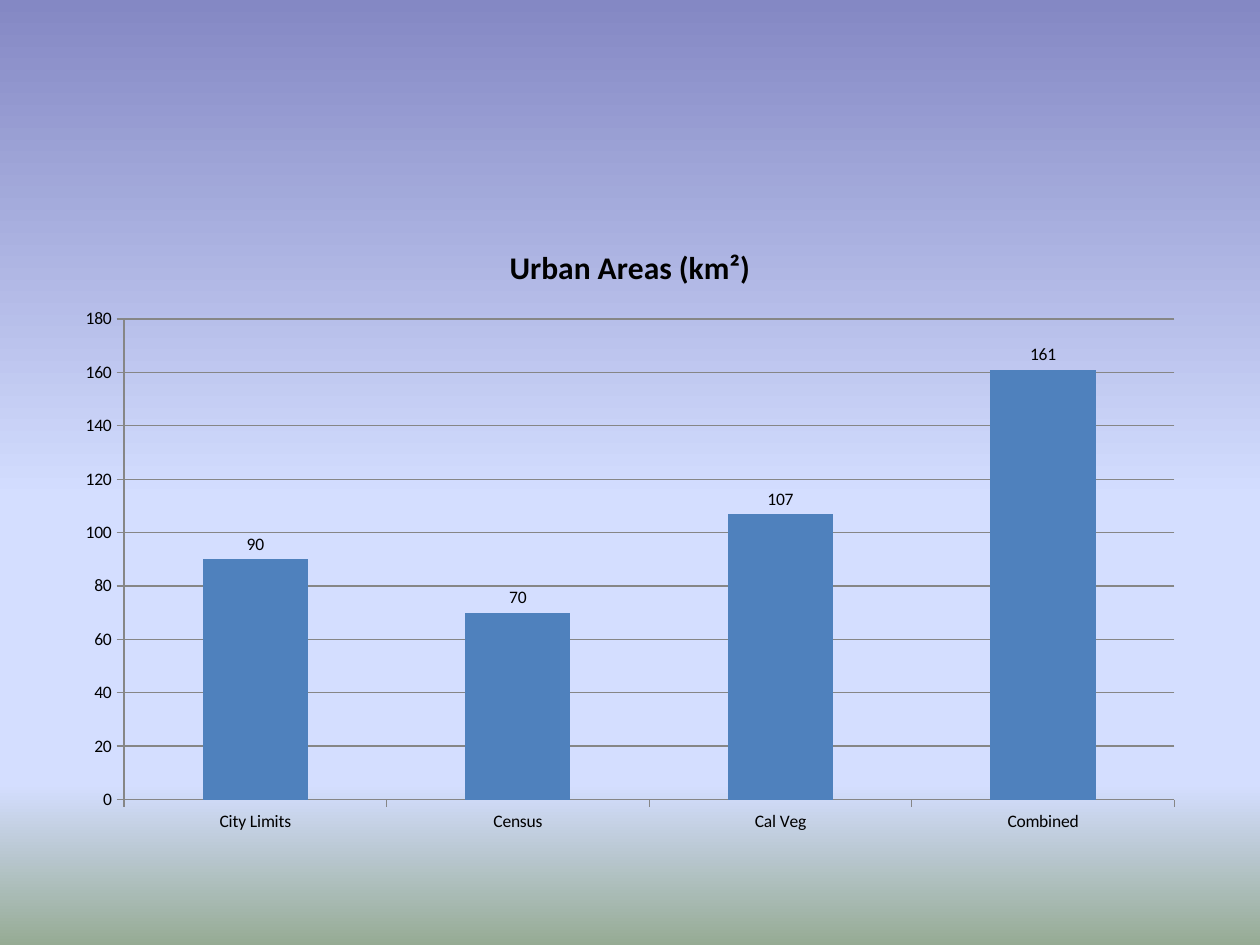
from lxml.etree import SubElement
from pptx import Presentation
from pptx.chart.data import CategoryChartData
from pptx.dml.color import RGBColor
from pptx.enum.chart import XL_CHART_TYPE as ChartType
from pptx.enum.chart import XL_LABEL_POSITION as LabelPosition
from pptx.enum.chart import XL_TICK_MARK as TickMark
from pptx.oxml.ns import qn
from pptx.util import Inches, Pt

FONT = "Calibri"
BLACK, BAR_BLUE, LINE_GRAY = "000000", "4F81BD", "868686"
SKY_STOPS = [(0, "8488C4"), (53, "D4DEFF"), (83, "D4DEFF"), (100, "96AB94")]
URBAN_AREAS = {"City Limits": 90, "Census": 70, "Cal Veg": 107, "Combined": 161}


def color(value):
    """Return the colour for a hex string."""
    return RGBColor.from_string(value)


def format_font(font, size, bold=False):
    """Apply the chart typeface at the given size."""
    font.name = FONT
    font.size = Pt(size)
    font.bold = bold
    font.color.rgb = color(BLACK)


def format_line(line):
    """Draw a thin gray chart line."""
    line.color.rgb = color(LINE_GRAY)
    line.width = Pt(0.75)


def paint_background(slide, stops):
    """Fill the slide with a top-to-bottom gradient."""
    fill = slide.background.fill
    fill.gradient()
    fill.gradient_angle = 270
    stop_list = slide.element.find(".//" + qn("a:gsLst"))
    for stop in list(stop_list):
        stop_list.remove(stop)
    for percent, value in stops:
        stop = SubElement(stop_list, qn("a:gs"), pos=str(percent * 1000))
        SubElement(stop, qn("a:srgbClr"), val=value)


def format_axes(chart):
    """Set the scale, ticks and gridlines of both axes."""
    for axis in (chart.category_axis, chart.value_axis):
        axis.major_tick_mark = TickMark.OUTSIDE
        axis.minor_tick_mark = TickMark.NONE
        format_line(axis.format.line)
        format_font(axis.tick_labels.font, 10)
    value_axis = chart.value_axis
    value_axis.minimum_scale, value_axis.maximum_scale = 0, 180
    value_axis.major_unit = 20
    value_axis.tick_labels.number_format = "0"
    value_axis.tick_labels.number_format_is_linked = False
    format_line(value_axis.major_gridlines.format.line)


def add_area_chart(slide, left, top, width, height):
    """Place the column chart of urban areas in the given box."""
    data = CategoryChartData(number_format="0")
    data.categories = list(URBAN_AREAS)
    data.add_series("Series 1", list(URBAN_AREAS.values()))
    chart = slide.shapes.add_chart(
        ChartType.COLUMN_CLUSTERED, left, top, width, height, data
    ).chart
    format_font(chart.font, 10)
    chart.has_legend = False
    chart.has_title = True
    title = chart.chart_title
    title.include_in_layout = False
    paragraph = title.text_frame.paragraphs[0]
    paragraph.text = "Urban Areas (km²)"
    format_font(paragraph.runs[0].font, 18, bold=True)
    format_axes(chart)

    plot = chart.plots[0]
    plot.gap_width = 150
    plot.vary_by_categories = False
    series = plot.series[0]
    series.format.fill.solid()
    series.format.fill.fore_color.rgb = color(BAR_BLUE)
    labels = series.data_labels
    labels.show_value = True
    labels.number_format = "0"
    labels.number_format_is_linked = False
    labels.position = LabelPosition.OUTSIDE_END
    format_font(labels.font, 10)


def main():
    """Build and save the slide."""
    presentation = Presentation()
    presentation.slide_width = Inches(10)
    presentation.slide_height = Inches(7.5)
    slide = presentation.slides.add_slide(presentation.slide_layouts[6])
    paint_background(slide, SKY_STOPS)
    add_area_chart(slide, Inches(0.5), Inches(1.75), Inches(9), Inches(4.95))
    presentation.save("out.pptx")


if __name__ == "__main__":
    main()
